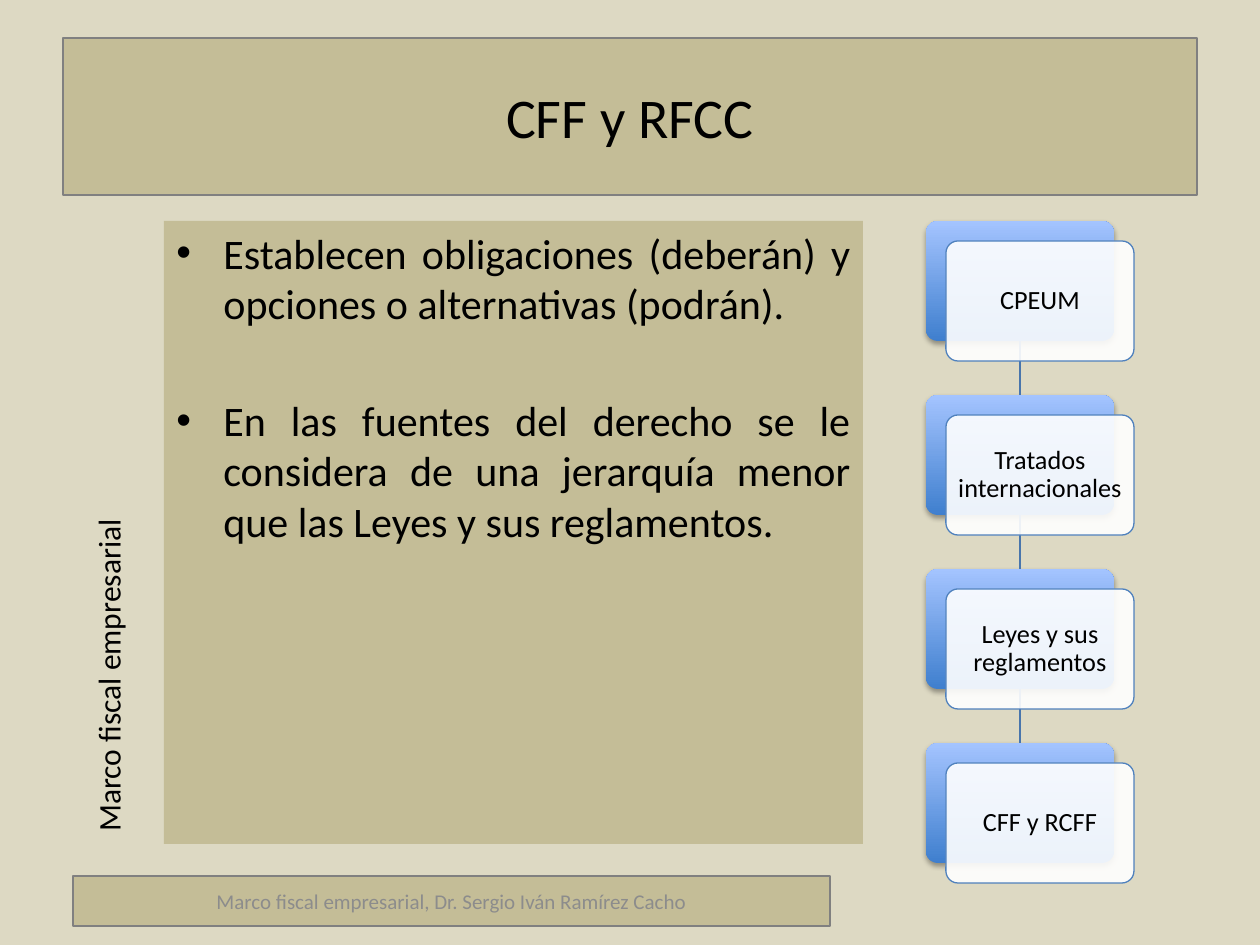
from lxml import etree
from pptx import Presentation
from pptx.dml.color import RGBColor
from pptx.enum.shapes import MSO_CONNECTOR, MSO_SHAPE
from pptx.enum.text import MSO_ANCHOR, PP_ALIGN
from pptx.oxml import parse_xml
from pptx.oxml.ns import nsdecls, qn
from pptx.util import Pt

PX = 7257  # EMU in one px, 126 px to the inch
KHAKI, GREY, BLACK = "C4BD97", "808080", "000000"
rgb = RGBColor.from_string


def add_box(kind, left, top, width, height, fill=None, line=None):
    """Add a preset shape without theme shadow, placed in px."""
    shape = slide.shapes.add_shape(kind, left * PX, top * PX, width * PX, height * PX)
    shape.shadow.inherit = False
    if fill:
        shape.fill.solid()
        shape.fill.fore_color.rgb = rgb(fill)
    if line:
        shape.line.color.rgb = rgb(line)
        shape.line.width = Pt(0.75)
    else:
        shape.line.fill.background()
    return shape


def format_text(paragraph, size, color=BLACK, align=PP_ALIGN.CENTER):
    paragraph.alignment = align
    paragraph.font.name = "Calibri"
    paragraph.font.size = Pt(size)
    paragraph.font.color.rgb = rgb(color)


presentation = Presentation()
presentation.slide_width = 1260 * PX
presentation.slide_height = 945 * PX
slide = presentation.slides.add_slide(presentation.slide_layouts[5])
slide.background.fill.solid()
slide.background.fill.fore_color.rgb = rgb("DDD9C3")

# Title
title = slide.shapes.title
title.left, title.top, title.width, title.height = 63 * PX, 38 * PX, 1134 * PX, 157 * PX
title.fill.solid()
title.fill.fore_color.rgb = rgb(KHAKI)
title.line.color.rgb = rgb(GREY)
title.line.width = Pt(0.75)
title.text_frame.text = "CFF y RFCC"
format_text(title.text_frame.paragraphs[0], 32)

# Vertical course name
course = slide.shapes.add_textbox(-204 * PX, 507 * PX, 624 * PX, 50 * PX)
course.rotation = 270
course.text_frame.word_wrap = True
course.text_frame.text = "Marco fiscal empresarial"
format_text(course.text_frame.paragraphs[0], 18, align=PP_ALIGN.LEFT)

# Bulleted body
body = add_box(MSO_SHAPE.RECTANGLE, 164, 221, 699, 623, KHAKI)
body.text_frame.vertical_anchor = MSO_ANCHOR.TOP
body.text_frame.text = (
    "Establecen obligaciones (deberán) y opciones o alternativas (podrán).\n"
    "En las fuentes del derecho se le considera de una jerarquía menor "
    "que las Leyes y sus reglamentos."
)
for paragraph in body.text_frame.paragraphs:
    properties = paragraph._p.get_or_add_pPr()
    properties.set("marL", str(47 * PX))
    properties.set("indent", str(-47 * PX))
    etree.SubElement(properties, qn("a:buFont")).set("typeface", "Arial")
    etree.SubElement(properties, qn("a:buChar")).set("char", "•")
    format_text(paragraph, 24, align=PP_ALIGN.JUSTIFY)
body.text_frame.paragraphs[1].space_before = Pt(38)

# Hierarchy: blue back cards, links between them, white front cards
levels = ["CPEUM", "Tratados internacionales", "Leyes y sus reglamentos", "CFF y RCFF"]
CARD_LEFT, CARD_TOP, CARD_STEP, CARD_OFFSET = 926, 221, 174, 20
CARD_WIDTH, CARD_HEIGHT = 188, 120

back_cards = []
for index in range(len(levels)):
    card = add_box(MSO_SHAPE.ROUNDED_RECTANGLE, CARD_LEFT, CARD_TOP + index * CARD_STEP,
                   CARD_WIDTH, CARD_HEIGHT)
    card.adjustments[0] = 0.1
    card.fill.gradient()
    card.fill.gradient_angle = 90
    for stop, color in zip(card.fill.gradient_stops, ("3F7FCE", "A4C4FF")):
        stop.color.rgb = rgb(color)
    card._element.spPr.find(qn("a:effectLst")).append(parse_xml(
        f'<a:outerShdw {nsdecls("a")} blurRad="{Pt(3.1)}" dist="{Pt(1.8)}" dir="5400000" '
        'rotWithShape="0"><a:srgbClr val="000000"><a:alpha val="35000"/></a:srgbClr>'
        '</a:outerShdw>'))
    back_cards.append(card)

for upper, lower in zip(back_cards, back_cards[1:]):
    link = slide.shapes.add_connector(MSO_CONNECTOR.STRAIGHT, 0, 0, 0, 0)
    link.begin_connect(upper, 2)
    link.end_connect(lower, 0)
    link.line.color.rgb = rgb("4875AC")
    link.line.width = Pt(0.75)
    etree.SubElement(link._element.spPr, qn("a:effectLst"))

for index, level in enumerate(levels):
    card = add_box(MSO_SHAPE.ROUNDED_RECTANGLE, CARD_LEFT + CARD_OFFSET,
                   CARD_TOP + CARD_OFFSET + index * CARD_STEP,
                   CARD_WIDTH, CARD_HEIGHT, "FFFFFF", "4F81BD")
    card.adjustments[0] = 0.1
    white = card._element.spPr.find(qn("a:solidFill")).find(qn("a:srgbClr"))
    etree.SubElement(white, qn("a:alpha")).set("val", "90000")
    frame = card.text_frame
    frame.margin_left = frame.margin_right = frame.margin_top = frame.margin_bottom = 8 * PX
    frame.text = level
    frame.paragraphs[0].line_spacing = 0.9
    format_text(frame.paragraphs[0], 15)

# Footer
footer = add_box(MSO_SHAPE.RECTANGLE, 73, 876, 757, 50, KHAKI, GREY)
footer.text_frame.text = "Marco fiscal empresarial, Dr. Sergio Iván Ramírez Cacho"
format_text(footer.text_frame.paragraphs[0], 12, "8C8C8C")

presentation.save("out.pptx")
